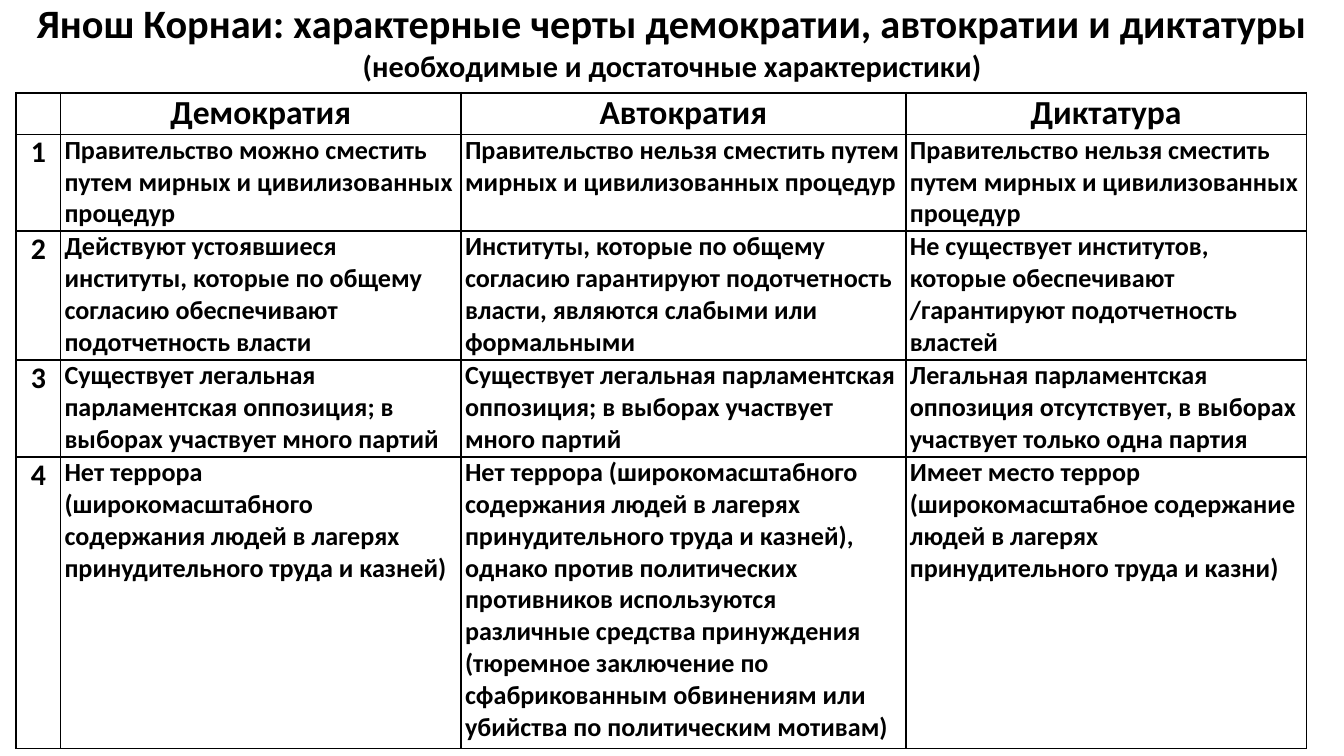
import pptx
import pptx.dml.color
import pptx.enum.text
import pptx.oxml
import pptx.oxml.ns
import pptx.util
from lxml import etree

Inches = pptx.util.Inches
Pt = pptx.util.Pt
ALIGN = pptx.enum.text.PP_ALIGN
ANCHOR = pptx.enum.text.MSO_ANCHOR

BLACK = pptx.dml.color.RGBColor(0, 0, 0)
FONT = "Calibri"
SLIDE_WIDTH = Inches(10)
SLIDE_HEIGHT = SLIDE_WIDTH * 9 // 16

COLUMN_WIDTHS = [0.33, 2.98, 3.31, 2.98]
ROW_HEIGHTS = [0.31, 0.72, 0.96, 0.72, 2.17]

TITLE = "Янош Корнаи: характерные черты демократии, автократии и диктатуры"
SUBTITLE = "(необходимые и достаточные характеристики)"
REGIMES = ["Демократия", "Aвтократия", "Диктатура"]
FEATURES = [
    ["Правительство можно сместить путем мирных и цивилизованных процедур",
     "Правительство нельзя сместить путем мирных и цивилизованных процедур",
     "Правительство нельзя сместить путем мирных и цивилизованных процедур"],
    ["Действуют устоявшиеся институты, которые по общему согласию "
     "обеспечивают подотчетность власти",
     "Институты, которые по общему согласию гарантируют подотчетность "
     "власти, являются слабыми или формальными",
     "Не существует институтов, которые обеспечивают /гарантируют "
     "подотчетность властей"],
    ["Существует легальная парламентская оппозиция; в выборах участвует "
     "много партий",
     "Существует легальная парламентская оппозиция; в выборах участвует "
     "много партий",
     "Легальная парламентская оппозиция отсутствует, в выборах участвует "
     "только одна партия"],
    ["Нет террора (широкомасштабного содержания людей в лагерях "
     "принудительного труда и казней)",
     "Нет террора (широкомасштабного содержания людей в лагерях "
     "принудительного труда и казней), однако против политических "
     "противников используются различные средства принуждения (тюремное "
     "заключение по сфабрикованным обвинениям или убийства по политическим "
     "мотивам)",
     "Имеет место террор (широкомасштабное содержание людей в лагерях "
     "принудительного труда и казни)"],
]


def style_run(run, size):
    run.font.name = FONT
    run.font.size = Pt(size)
    run.font.bold = True
    run.font.color.rgb = BLACK


def add_heading(slide):
    heading = slide.shapes.add_textbox(0, 0, SLIDE_WIDTH, Inches(0.61))
    frame = heading.text_frame
    frame.word_wrap = True
    frame.vertical_anchor = ANCHOR.MIDDLE
    frame.margin_top = frame.margin_bottom = 0
    frame.text = f"{TITLE}\v{SUBTITLE}"
    line = frame.paragraphs[0]
    line.alignment = ALIGN.CENTER
    for run, size in zip(line.runs, (21.6, 16.2)):
        style_run(run, size)


def draw_borders(cell):
    """Put a 1 pt line on all four sides; lines must precede the fill."""
    properties = cell._tc.get_or_add_tcPr()
    for position, side in enumerate(("lnL", "lnR", "lnT", "lnB")):
        border = pptx.oxml.parse_xml(
            f'<a:{side} {pptx.oxml.ns.nsdecls("a")} w="{Pt(1)}"/>')
        fill = etree.SubElement(border, pptx.oxml.ns.qn("a:solidFill"))
        etree.SubElement(fill, pptx.oxml.ns.qn("a:srgbClr"), val=str(BLACK))
        properties.insert(position, border)


def fill_cell(cell, text, size, alignment):
    cell.fill.background()
    draw_borders(cell)
    cell.margin_left = cell.margin_right = Inches(0.03)
    cell.margin_top = cell.margin_bottom = 0
    paragraph = cell.text_frame.paragraphs[0]
    paragraph.text = text
    paragraph.alignment = alignment
    for run in paragraph.runs:
        style_run(run, size)


def add_comparison(slide):
    content = [["", *REGIMES]]
    content += [[str(number), *row] for number, row in enumerate(FEATURES, 1)]
    comparison = slide.shapes.add_table(
        len(ROW_HEIGHTS), len(COLUMN_WIDTHS), Inches(0.12), Inches(0.69),
        Inches(sum(COLUMN_WIDTHS)), Inches(sum(ROW_HEIGHTS))).table
    comparison.first_row = comparison.horz_banding = False
    for column, width in zip(comparison.columns, COLUMN_WIDTHS):
        column.width = Inches(width)
    for row, height in zip(comparison.rows, ROW_HEIGHTS):
        row.height = Inches(height)
    for r, texts in enumerate(content):
        for c, text in enumerate(texts):
            size = 18 if r == 0 else 16 if c == 0 else 14
            alignment = ALIGN.LEFT if r and c else ALIGN.CENTER
            fill_cell(comparison.cell(r, c), text, size, alignment)


def main():
    deck = pptx.Presentation()
    deck.slide_width, deck.slide_height = SLIDE_WIDTH, SLIDE_HEIGHT
    slide = deck.slides.add_slide(deck.slide_layouts[6])
    add_heading(slide)
    add_comparison(slide)
    deck.save("out.pptx")


if __name__ == "__main__":
    main()
